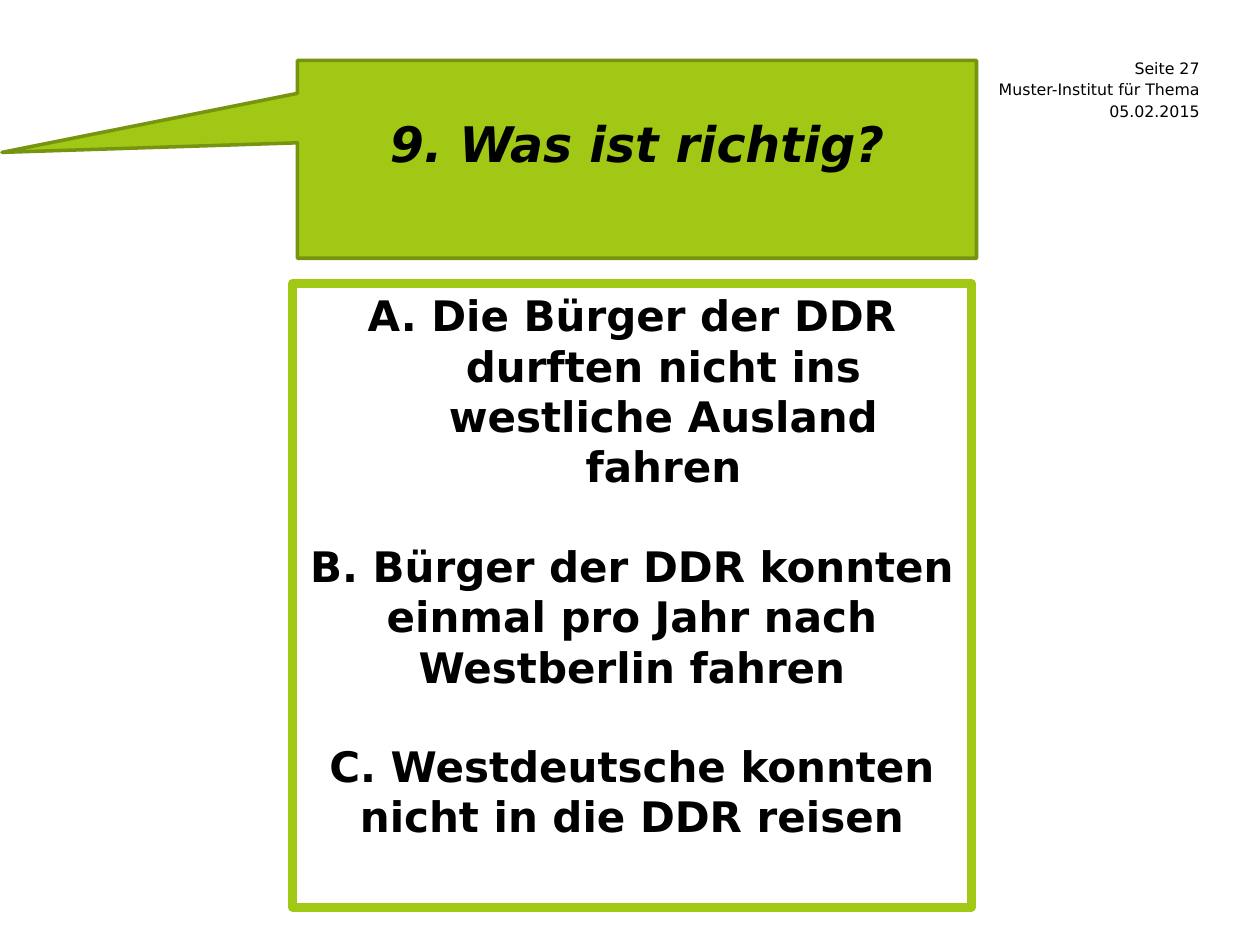
from dataclasses import dataclass

import pptx
import pptx.dml.color
import pptx.enum.shapes
import pptx.enum.text
import pptx.util

Inches = pptx.util.Inches
Pt = pptx.util.Pt
Align = pptx.enum.text.PP_ALIGN
Anchor = pptx.enum.text.MSO_ANCHOR
Form = pptx.enum.shapes.MSO_SHAPE

FONT = "DejaVu Sans"
GREEN = "A0C814"
DARK = "76940F"
BLACK = "000000"


@dataclass
class Panel:
    form: int
    left: float
    top: float
    width: float
    height: float
    line: str
    weight: float
    fill: str | None = None


def paint(target, code: str) -> None:
    target.rgb = pptx.dml.color.RGBColor.from_string(code)


def write(frame, text: str, *, size: float, bold: bool = False,
          slant: bool = False, align=Align.CENTER, anchor=Anchor.TOP,
          gap: float = 0, inset=(0.1, 0.05, 0.1, 0.05)) -> None:
    frame.word_wrap = True
    frame.vertical_anchor = anchor
    sides = [Inches(side) for side in inset]
    frame.margin_left, frame.margin_top, frame.margin_right, frame.margin_bottom = sides
    frame.text = text
    for index, para in enumerate(frame.paragraphs):
        para.alignment = align
        if index:
            para.space_before = Pt(gap)
        font = para.runs[0].font
        font.name = FONT
        font.size = Pt(size)
        font.bold = bold
        font.italic = slant
        paint(font.color, BLACK)


def draw(slide, panel: Panel):
    shape = slide.shapes.add_shape(
        panel.form, Inches(panel.left), Inches(panel.top),
        Inches(panel.width), Inches(panel.height))
    shape.shadow.inherit = False
    if panel.fill:
        shape.fill.solid()
        paint(shape.fill.fore_color, panel.fill)
    else:
        shape.fill.background()
    paint(shape.line.color, panel.line)
    shape.line.width = Pt(panel.weight)
    return shape


def label(slide, row: int, text: str) -> None:
    box = slide.shapes.add_textbox(
        Inches(7.32), Inches(0.46 + 0.17 * row), Inches(2.2), Inches(0.16))
    write(box.text_frame, text, size=9, align=Align.RIGHT,
          anchor=Anchor.MIDDLE, inset=(0, 0, 0, 0))


def main() -> None:
    deck = pptx.Presentation()
    deck.slide_width = Inches(10)
    deck.slide_height = Inches(7.5)
    slide = deck.slides.add_slide(deck.slide_layouts[6])

    lines = ["Seite 27", "Muster-Institut für Thema", "05.02.2015"]
    for row, text in enumerate(lines):
        label(slide, row, text)

    bubble = draw(slide, Panel(Form.RECTANGULAR_CALLOUT, 2.36, 0.48, 5.39, 1.57,
                               DARK, 2, GREEN))
    bubble.adjustments[0] = -0.935
    bubble.adjustments[1] = -0.035
    write(bubble.text_frame, "9. Was ist richtig?", size=28, bold=True,
          slant=True, anchor=Anchor.MIDDLE, inset=(0.1, 0.05, 0.1, 0.31))

    choices = [
        "A. Die Bürger der DDR durften nicht ins westliche Ausland fahren",
        "B. Bürger der DDR konnten einmal pro Jahr nach Westberlin fahren",
        "C. Westdeutsche konnten nicht in die DDR reisen",
    ]
    frame = draw(slide, Panel(Form.RECTANGLE, 2.32, 2.25, 5.39, 4.95,
                              GREEN, 5)).text_frame
    write(frame, "\n".join(choices), size=24, bold=True, gap=28)
    props = frame.paragraphs[0]._p.get_or_add_pPr()
    props.set("marL", str(Inches(0.5)))
    props.set("indent", str(Inches(-0.5)))

    deck.save("out.pptx")


if __name__ == "__main__":
    main()
